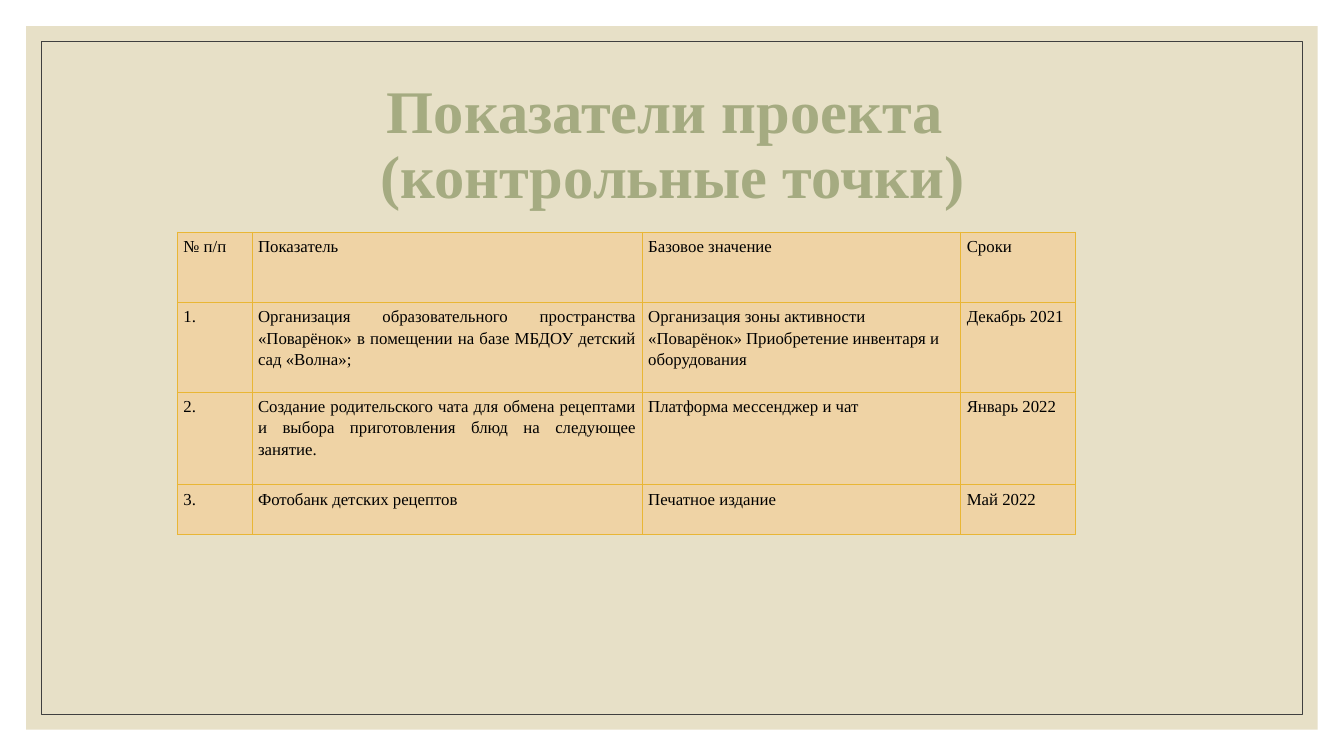
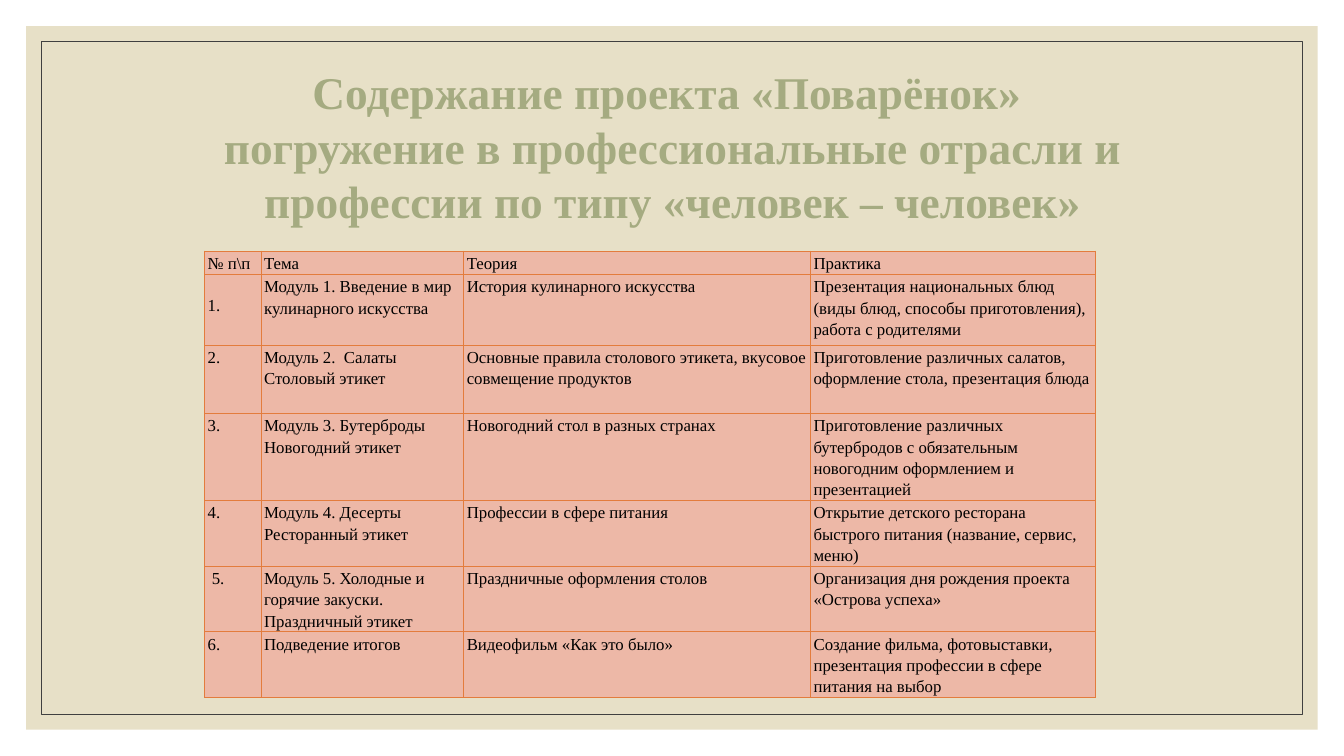
"""Build two project slides, each with a title and a bordered table."""
from dataclasses import dataclass

from lxml.etree import SubElement
from pptx import Presentation
from pptx.dml.color import RGBColor
from pptx.enum.shapes import MSO_SHAPE
from pptx.enum.text import MSO_ANCHOR, MSO_AUTO_SIZE, PP_ALIGN
from pptx.oxml.ns import qn
from pptx.util import Inches, Pt

FONT = "Times New Roman"
SAND = RGBColor(0xE7, 0xE0, 0xC7)
GRAPHITE = RGBColor(0x40, 0x40, 0x40)
SAGE = RGBColor(0xA5, 0xAB, 0x81)
BLACK = RGBColor(0, 0, 0)
GOLD = RGBColor(0xE9, 0xB6, 0x35)
GOLD_TINT = RGBColor(0xEF, 0xD3, 0xA5)
ORANGE = RGBColor(0xE3, 0x7C, 0x3D)
ORANGE_TINT = RGBColor(0xED, 0xB8, 0xA7)


@dataclass(frozen=True)
class TableSpec:
    left: float
    top: float
    cols: tuple[float, ...]
    rows: tuple[float, ...]
    margin_x: float
    margin_y: float
    fill: RGBColor
    border: RGBColor
    cells: tuple[tuple[str, ...], ...]
    justified_col: int | None = None


@dataclass(frozen=True)
class SlideSpec:
    title: str
    size: float
    spacing: float
    table: TableSpec


INDICATORS = SlideSpec(
    "Показатели проекта \v(контрольные точки)", 43.2, 0.9,
    TableSpec(
        1.76, 2.3, (0.74, 3.87, 3.16, 1.14), (0.7, 0.89, 0.92, 0.49),
        0.06, 0.03, GOLD_TINT, GOLD,
        (
            ("№ п/п", "Показатель", "Базовое значение", "Сроки"),
            ("1.", "Организация образовательного пространства «Поварёнок» "
             "в помещении на базе МБДОУ детский сад «Волна»;",
             "Организация зоны активности\n"
             "«Поварёнок» Приобретение инвентаря и оборудования",
             "Декабрь 2021"),
            ("2.", "Создание родительского чата для обмена рецептами "
             "и выбора приготовления блюд на следующее занятие.",
             "Платформа мессенджер и чат", "Январь 2022"),
            ("3.", "Фотобанк детских рецептов", "Печатное издание", "Май 2022"),
        ),
        justified_col=1,
    ),
)

CONTENTS = SlideSpec(
    "Содержание проекта «Поварёнок» \vпогружение в профессиональные отрасли "
    "и профессии по типу «человек – человек»", 32.4, 1.0,
    TableSpec(
        2.03, 2.49, (0.56, 2.01, 3.44, 2.82),
        (0.22, 0.7, 0.68, 0.7, 0.6, 0.51, 0.51),
        0.03, 0.01, ORANGE_TINT, ORANGE,
        (
            ("№ п\\п", "Тема", "Теория", "Практика"),
            ("1.", "Модуль 1. Введение в мир кулинарного искусства",
             "История кулинарного искусства",
             "Презентация национальных блюд (виды блюд, способы "
             "приготовления), работа с родителями"),
            ("2.", "Модуль 2.  Салаты\nСтоловый этикет",
             "Основные правила столового этикета, вкусовое совмещение продуктов",
             "Приготовление различных салатов, оформление стола, "
             "презентация блюда"),
            ("3.", "Модуль 3. Бутерброды\nНовогодний этикет",
             "Новогодний стол в разных странах",
             "Приготовление различных бутербродов с обязательным "
             "новогодним оформлением и презентацией"),
            ("4.", "Модуль 4. Десерты\nРесторанный этикет",
             "Профессии в сфере питания",
             "Открытие детского ресторана быстрого питания "
             "(название, сервис, меню)"),
            (" 5.", "Модуль 5. Холодные и горячие закуски. Праздничный этикет",
             "Праздничные оформления столов",
             "Организация дня рождения проекта «Острова успеха»"),
            ("6.", "Подведение итогов", "Видеофильм «Как это было»",
             "Создание фильма, фотовыставки, презентация профессии "
             "в сфере питания на выбор"),
        ),
    ),
)


def add_panel(s, inset: float):
    """Add a plain rectangle at an equal inset from the slide edges."""
    sp = s.shapes.add_shape(
        MSO_SHAPE.RECTANGLE, Inches(inset), Inches(inset),
        Inches(13.33 - 2 * inset), Inches(7.5 - 2 * inset))
    sp.shadow.inherit = False
    return sp


def set_backdrop(s, layout) -> None:
    """Draw the sand panel and thin frame and hand them to the layout."""
    for ph in list(layout.placeholders)[1:]:
        ph.element.getparent().remove(ph.element)
    panel = add_panel(s, 0.26)
    panel.fill.solid()
    panel.fill.fore_color.rgb = SAND
    panel.line.fill.background()
    frame = add_panel(s, 0.41)
    frame.fill.background()
    frame.line.color.rgb = GRAPHITE
    frame.line.width = Pt(0.5)
    tree = layout.placeholders[0].element.getparent()
    for sp in (frame, panel):
        tree.insert(2, sp.element)


def format_runs(p, size: float, color: RGBColor, bold: bool = False) -> None:
    """Give every run of a paragraph the shared font."""
    for r in p.runs:
        r.font.name = FONT
        r.font.size = Pt(size)
        r.font.bold = bold
        r.font.color.rgb = color


def set_title(s, spec: SlideSpec) -> None:
    """Place and format the title placeholder."""
    sp = s.shapes.title
    sp.left, sp.top, sp.width, sp.height = map(Inches, (1.17, 0.7, 11, 1.5))
    tf = sp.text_frame
    tf.text = spec.title
    tf.word_wrap = True
    tf.auto_size = MSO_AUTO_SIZE.NONE
    tf.vertical_anchor = MSO_ANCHOR.MIDDLE
    p = tf.paragraphs[0]
    p.alignment = PP_ALIGN.CENTER
    p.line_spacing = spec.spacing
    format_runs(p, spec.size, SAGE, bold=True)


def set_borders(cell, color: RGBColor) -> None:
    """Outline a cell on all four sides."""
    pr = cell._tc.get_or_add_tcPr()
    for i, side in enumerate(("lnL", "lnR", "lnT", "lnB")):
        ln = SubElement(pr, qn(f"a:{side}"), w=str(Pt(0.5)))
        fill = SubElement(ln, qn("a:solidFill"))
        SubElement(fill, qn("a:srgbClr"), val=str(color))
        pr.insert(i, ln)


def add_grid(s, spec: TableSpec):
    """Add a filled and bordered table and return it."""
    table = s.shapes.add_table(
        len(spec.rows), len(spec.cols), Inches(spec.left), Inches(spec.top),
        Inches(sum(spec.cols)), Inches(sum(spec.rows))).table
    table.first_row = table.horz_banding = False
    for col, width in zip(table.columns, spec.cols):
        col.width = Inches(width)
    for row, height, texts in zip(table.rows, spec.rows, spec.cells):
        row.height = Inches(height)
        for i, (cell, text) in enumerate(zip(row.cells, texts)):
            cell.text = text
            cell.margin_left = cell.margin_right = Inches(spec.margin_x)
            cell.margin_top = cell.margin_bottom = Inches(spec.margin_y)
            cell.fill.solid()
            cell.fill.fore_color.rgb = spec.fill
            set_borders(cell, spec.border)
            for p in cell.text_frame.paragraphs:
                justified = i == spec.justified_col
                p.alignment = PP_ALIGN.JUSTIFY if justified else PP_ALIGN.LEFT
                p.line_spacing = 1.14
                format_runs(p, 12, BLACK)
    return table


def main() -> None:
    """Build and save the presentation."""
    prs = Presentation()
    prs.slide_width, prs.slide_height = Inches(13.33), Inches(7.5)
    layout = prs.slide_layouts[5]
    tables = []
    for i, spec in enumerate((INDICATORS, CONTENTS)):
        s = prs.slides.add_slide(layout)
        if i == 0:
            set_backdrop(s, layout)
        set_title(s, spec)
        tables.append(add_grid(s, spec.table))
    tables[1].cell(1, 0).margin_top = Inches(0.2)
    prs.save("out.pptx")


if __name__ == "__main__":
    main()
